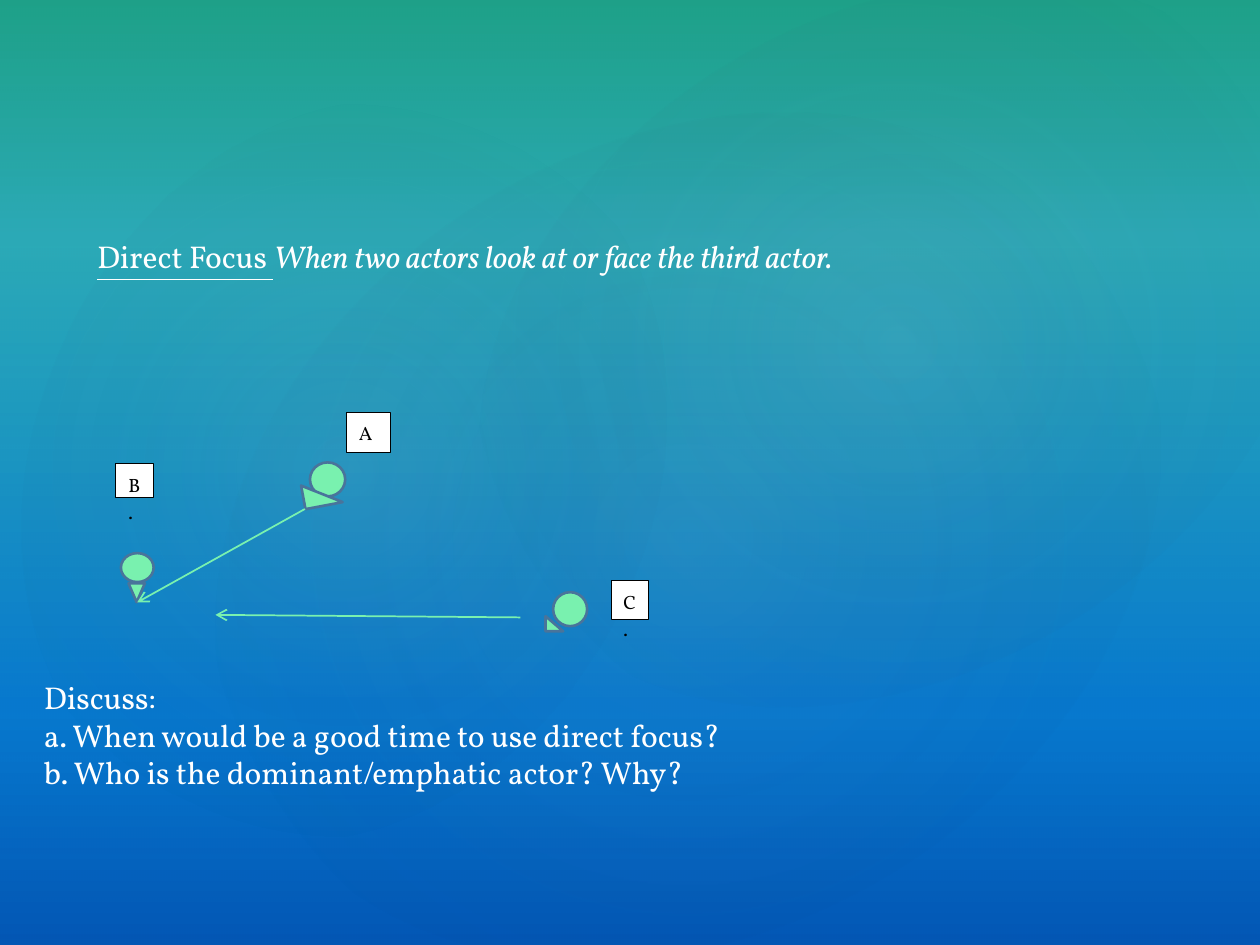
import pptx
import pptx.dml.color
import pptx.enum.shapes
import pptx.enum.text
import pptx.oxml
import pptx.oxml.ns
import pptx.util
from pptx.util import Inches

FONT = "Vollkorn"
COLORS = {
    "white": "FFFFFF", "black": "000000", "mint": "79F1AF", "steel": "49749B",
    "teal": "03D4A8", "aqua": "21D6E0", "azure": "0087E6", "blue": "005CBF",
    "umber": "504652", "navy": "242852", "mauve": "C4BCC6",
}
RGB = {name: pptx.dml.color.RGBColor.from_string(value) for name, value in COLORS.items()}
SHAPE = pptx.enum.shapes.MSO_SHAPE
qn = pptx.oxml.ns.qn


def set_gradient(fill, root, stops, radial=False):
    fill.gradient()
    gradient = next(root.iter(qn("a:gradFill")))
    del gradient[:]
    stop_list = gradient.makeelement(qn("a:gsLst"), {})
    gradient.append(stop_list)
    for position, color, opacity in stops:
        stop = stop_list.add_gs() if hasattr(stop_list, "add_gs") else pptx.oxml.ns and stop_list.makeelement(qn("a:gs"), {})
        stop.set("pos", str(position * 1000))
        stop_list.append(stop)
        tint = stop.makeelement(qn("a:srgbClr"), {"val": COLORS[color]})
        stop.append(tint)
        tint.append(tint.makeelement(qn("a:alpha"), {"val": str(opacity * 1000)}))
    if radial:
        shade = gradient.makeelement(qn("a:path"), {"path": "circle"})
        center = {side: "50000" for side in "ltrb"}
        shade.append(shade.makeelement(qn("a:fillToRect"), center))
    else:
        shade = gradient.makeelement(qn("a:lin"), {"ang": "5400000", "scaled": "0"})
    gradient.append(shade)


def add_figure(kind, frame, fill="mint", line="steel", width=1.5):
    shape = page.shapes.add_shape(kind, *map(Inches, frame))
    shape.shadow.inherit = False
    shape.fill.solid()
    shape.fill.fore_color.rgb = RGB[fill]
    shape.line.color.rgb = RGB[line]
    shape.line.width = pptx.util.Pt(width)
    return shape


deck = pptx.Presentation()
deck.slide_width, deck.slide_height = Inches(10), Inches(7.5)
page = deck.slides.add_slide(deck.slide_layouts[5])
set_gradient(page.background.fill, page._element,
             [(0, "teal", 100), (25, "aqua", 100), (75, "azure", 100), (100, "blue", 100)])

overlays = [
    (SHAPE.RECTANGLE, (0, 0, 10, 7.5), 0, [(0, "umber", 36), (100, "navy", 10)]),
    (SHAPE.OVAL, (1.5, 1.14, 7.92, 6.24), 328.7, [(0, "mauve", 7), (58, "navy", 0)]),
    (SHAPE.OVAL, (-0.3, 1.28, 6.06, 4.9), 294.3, [(0, "mauve", 8), (58, "navy", 0)]),
    (SHAPE.OVAL, (3.58, 0.13, 7.09, 5.2), 328.7, [(0, "mauve", 8), (58, "navy", 0)]),
]
for kind, frame, rotation, stops in overlays:
    overlay = page.shapes.add_shape(kind, *map(Inches, frame))
    overlay.shadow.inherit = False
    overlay.line.fill.background()
    overlay.rotation = rotation
    set_gradient(overlay.fill, overlay._element, stops, radial=kind == SHAPE.OVAL)

title = page.shapes.title
page.shapes._spTree.append(title._element)
title.left, title.top, title.width, title.height = map(Inches, (0.67, 1.83, 7.42, 0.4))
title.text_frame.auto_size = pptx.enum.text.MSO_AUTO_SIZE.NONE
title.text_frame.vertical_anchor = pptx.enum.text.MSO_ANCHOR.TOP
para = title.text_frame.paragraphs[0]
para.alignment = pptx.enum.text.PP_ALIGN.LEFT
para.font.name, para.font.size = FONT, pptx.util.Pt(18)
para.font.color.rgb = RGB["white"]
term = para.add_run()
term.text = "Direct Focus "
term.font.underline = True
meaning = para.add_run()
meaning.text = "When two actors look at or face the third actor."
meaning.font.italic = True

labels = [
    ("B.", (0.92, 3.68, 0.3, 0.27)),
    ("A", (2.75, 3.27, 0.35, 0.32)),
    ("C.", (4.85, 4.61, 0.3, 0.31)),
]
for text, frame in labels:
    label = add_figure(SHAPE.RECTANGLE, frame, "white", "black", 0.5)
    label.text_frame.word_wrap = True
    label.text_frame.vertical_anchor = pptx.enum.text.MSO_ANCHOR.TOP
    para = label.text_frame.paragraphs[0]
    para.text = text
    para.alignment = pptx.enum.text.PP_ALIGN.LEFT
    para.line_spacing, para.space_after = 1.15, pptx.util.Pt(10)
    para.font.name, para.font.size = FONT, pptx.util.Pt(11)
    para.font.color.rgb = RGB["black"]

actors = [
    ((0.96, 4.39, 0.26, 0.23), SHAPE.ISOSCELES_TRIANGLE, (1.02, 4.63, 0.13, 0.15), 0, "flipV"),
    ((2.46, 3.67, 0.28, 0.27), SHAPE.RIGHT_TRIANGLE, (2.46, 3.77, 0.19, 0.3), 79.3, "flipH"),
    ((4.39, 4.7, 0.27, 0.27), SHAPE.RIGHT_TRIANGLE, (4.33, 4.89, 0.14, 0.12), 0, None),
]
for head_frame, nose_kind, nose_frame, rotation, flip in actors:
    add_figure(SHAPE.OVAL, head_frame)
    nose = add_figure(nose_kind, nose_frame)
    nose.rotation = rotation
    if flip:
        nose._element.spPr.find(qn("a:xfrm")).set(flip, "1")

for sight_line in [(2.42, 4.04, 1.09, 4.78), (4.13, 4.9, 1.71, 4.88)]:
    arrow = page.shapes.add_connector(pptx.enum.shapes.MSO_CONNECTOR.STRAIGHT,
                                      *map(Inches, sight_line))
    arrow.line.color.rgb = RGB["mint"]
    arrow.line.width = pptx.util.Pt(1)
    outline = arrow.line._get_or_add_ln()
    outline.append(outline.makeelement(qn("a:tailEnd"), {"type": "arrow"}))
    properties = arrow._element.spPr
    properties.append(properties.makeelement(qn("a:effectLst"), {}))

box = page.shapes.add_textbox(*map(Inches, (0.25, 5.33, 6.75, 1.01)))
box.text_frame.word_wrap = True
box.text_frame.text = "\n".join([
    "Discuss:",
    "a. When would be a good time to use direct focus?",
    "b. Who is the dominant/emphatic actor? Why?",
])
for para in box.text_frame.paragraphs:
    para.font.name, para.font.size = FONT, pptx.util.Pt(18)
    para.font.color.rgb = RGB["white"]

deck.save("out.pptx")
